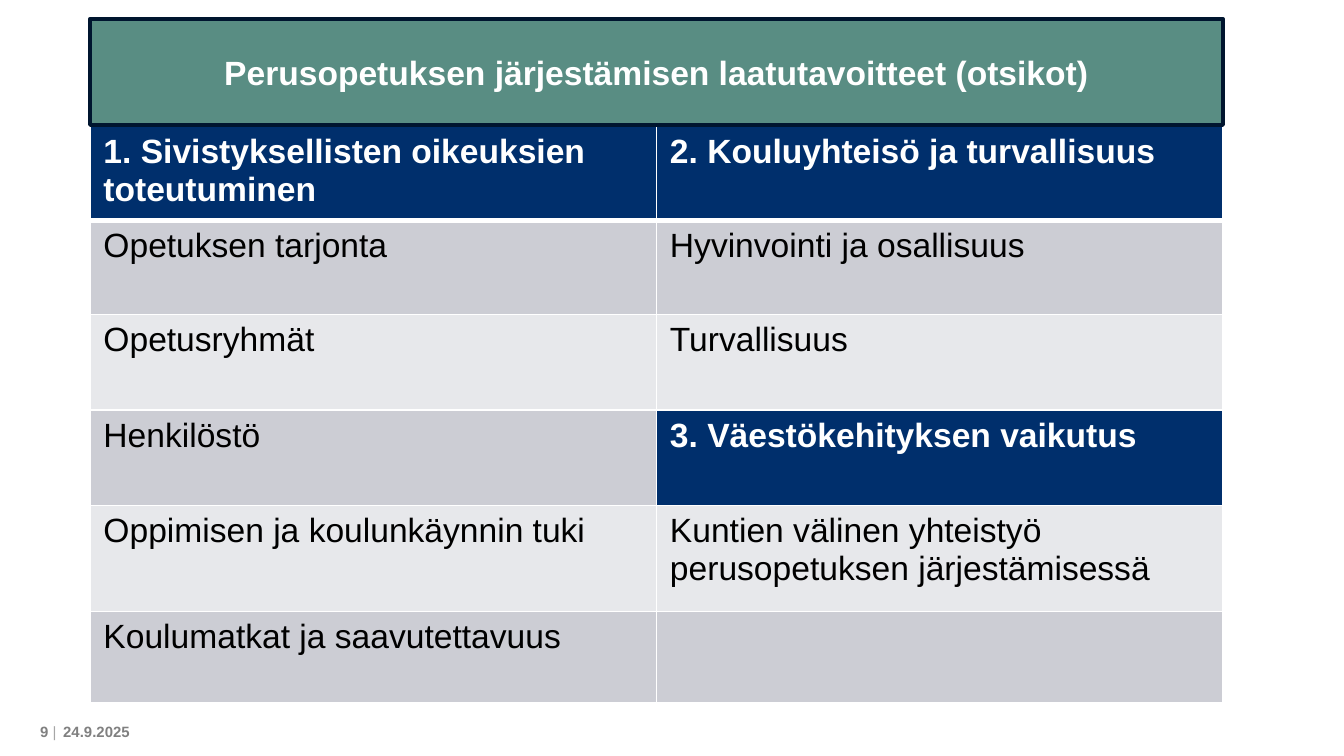
from typing import NamedTuple

from lxml import etree
from pptx import Presentation
from pptx.dml.color import RGBColor
from pptx.enum.shapes import MSO_SHAPE
from pptx.enum.text import MSO_ANCHOR, PP_ALIGN
from pptx.oxml.ns import qn
from pptx.util import Inches, Pt

RECTANGLE = MSO_SHAPE.RECTANGLE
MIDDLE = MSO_ANCHOR.MIDDLE
LEFT, CENTER, RIGHT = PP_ALIGN.LEFT, PP_ALIGN.CENTER, PP_ALIGN.RIGHT

WHITE = RGBColor(0xFF, 0xFF, 0xFF)
BLACK = RGBColor(0x00, 0x00, 0x00)
NAVY = RGBColor(0x00, 0x2F, 0x6C)
DARK_NAVY = RGBColor(0x00, 0x15, 0x2F)
GREEN = RGBColor(0x59, 0x8D, 0x83)
GREY = RGBColor(0x80, 0x80, 0x80)
LIGHT_GREY = RGBColor(0xA6, 0xA6, 0xA6)
BANDS = (RGBColor(0xE7, 0xE8, 0xEB), RGBColor(0xCC, 0xCD, 0xD4))

FONT = "Arial"
BODY_SIZE, FOOTER_SIZE = 18, 8
SLIDE_WIDTH = Inches(10)
SLIDE_HEIGHT = SLIDE_WIDTH * 9 // 16
CONTENT_LEFT, CONTENT_WIDTH = Inches(0.67), Inches(8.43)
COLUMN_WIDTH = CONTENT_WIDTH // 2
BANNER_TOP, BANNER_HEIGHT = Inches(0.14), Inches(0.79)
TABLE_TOP, TABLE_HEIGHT = Inches(0.94), Inches(4.28)
ROW_HEIGHTS = [Inches(height) for height in (0.35, 0.7, 0.71, 0.71, 0.79, 0.68)]
FOOTER_TOP, FOOTER_HEIGHT = Inches(5.33), Inches(0.22)


class Run(NamedTuple):
    text: str
    color: RGBColor
    bold: bool = True


class Goal(NamedTuple):
    text: str
    heading: bool = False


class FooterField(NamedTuple):
    left: float
    width: float
    margins: tuple[float, float]
    alignment: PP_ALIGN
    runs: list[Run]


GOALS = [
    (Goal("1. Sivistyksellisten oikeuksien toteutuminen", True),
     Goal("2. Kouluyhteisö ja turvallisuus", True)),
    (Goal("Opetuksen tarjonta"), Goal("Hyvinvointi ja osallisuus")),
    (Goal("Opetusryhmät"), Goal("Turvallisuus")),
    (Goal("Henkilöstö"), Goal("3. Väestökehityksen vaikutus", True)),
    (Goal("Oppimisen ja koulunkäynnin tuki"),
     Goal("Kuntien välinen yhteistyö perusopetuksen järjestämisessä")),
    (Goal("Koulumatkat ja saavutettavuus"), Goal("")),
]

FOOTER = [
    FooterField(0, 0.44, (0.1, 0.02), RIGHT, [Run("9 ", GREY), Run("|", LIGHT_GREY, False)]),
    FooterField(0.47, 0.75, (0, 0), LEFT, [Run("24.9.2025", GREY)]),
]


def write_runs(paragraph, runs: list[Run], size: int, alignment: PP_ALIGN = LEFT) -> None:
    paragraph.alignment = alignment
    for item in runs:
        run = paragraph.add_run()
        run.text = item.text
        run.font.name = FONT
        run.font.size = Pt(size)
        run.font.bold = item.bold
        run.font.color.rgb = item.color


def set_borders(cell, widths: dict[str, int]) -> None:
    """Put white lines on a cell, ahead of its fill as the schema requires."""
    properties = cell._tc.get_or_add_tcPr()
    for position, (side, width) in enumerate(widths.items()):
        line = etree.Element(qn(f"a:ln{side}"), w=str(Pt(width)))
        fill = etree.SubElement(line, qn("a:solidFill"))
        etree.SubElement(fill, qn("a:srgbClr"), val=str(WHITE))
        properties.insert(position, line)


def add_goal_table(slide) -> None:
    """Draw the goals; the header row grows to fit its two lines of text."""
    frame = slide.shapes.add_table(len(GOALS), 2, CONTENT_LEFT, TABLE_TOP,
                                   CONTENT_WIDTH, TABLE_HEIGHT)
    table = frame.table
    for column in table.columns:
        column.width = COLUMN_WIDTH
    for row_index, goals in enumerate(GOALS):
        table.rows[row_index].height = ROW_HEIGHTS[row_index]
        for column_index, goal in enumerate(goals):
            cell = table.cell(row_index, column_index)
            cell.fill.solid()
            cell.fill.fore_color.rgb = NAVY if goal.heading else BANDS[row_index % 2]
            set_borders(cell, {"L": 1, "R": 1, "T": 3 if row_index == 1 else 1,
                               "B": 3 if row_index == 0 else 1})
            if goal.text:
                color = WHITE if goal.heading else BLACK
                write_runs(cell.text_frame.paragraphs[0],
                           [Run(goal.text, color, goal.heading)], BODY_SIZE)
    frame.height = TABLE_HEIGHT


def add_banner(slide, title: str) -> None:
    banner = slide.shapes.add_shape(RECTANGLE, CONTENT_LEFT, BANNER_TOP,
                                    CONTENT_WIDTH, BANNER_HEIGHT)
    banner.shadow.inherit = False
    banner.fill.solid()
    banner.fill.fore_color.rgb = GREEN
    banner.line.color.rgb = DARK_NAVY
    banner.line.width = Pt(2)
    banner.text_frame.word_wrap = True
    banner.text_frame.vertical_anchor = MIDDLE
    write_runs(banner.text_frame.paragraphs[0], [Run(title, WHITE)], BODY_SIZE, CENTER)


def add_footer_field(slide, field: FooterField) -> None:
    box = slide.shapes.add_textbox(Inches(field.left), FOOTER_TOP,
                                   Inches(field.width), FOOTER_HEIGHT)
    frame = box.text_frame
    frame.word_wrap = True
    frame.vertical_anchor = MIDDLE
    frame.margin_left, frame.margin_right = map(Inches, field.margins)
    frame.margin_top = frame.margin_bottom = 0
    write_runs(frame.paragraphs[0], field.runs, FOOTER_SIZE, field.alignment)


def main() -> None:
    presentation = Presentation()
    presentation.slide_width, presentation.slide_height = SLIDE_WIDTH, SLIDE_HEIGHT
    slide = presentation.slides.add_slide(presentation.slide_layouts[6])
    for field in FOOTER:
        add_footer_field(slide, field)
    add_goal_table(slide)
    add_banner(slide, "Perusopetuksen järjestämisen laatutavoitteet (otsikot)")
    presentation.save("out.pptx")


if __name__ == "__main__":
    main()
